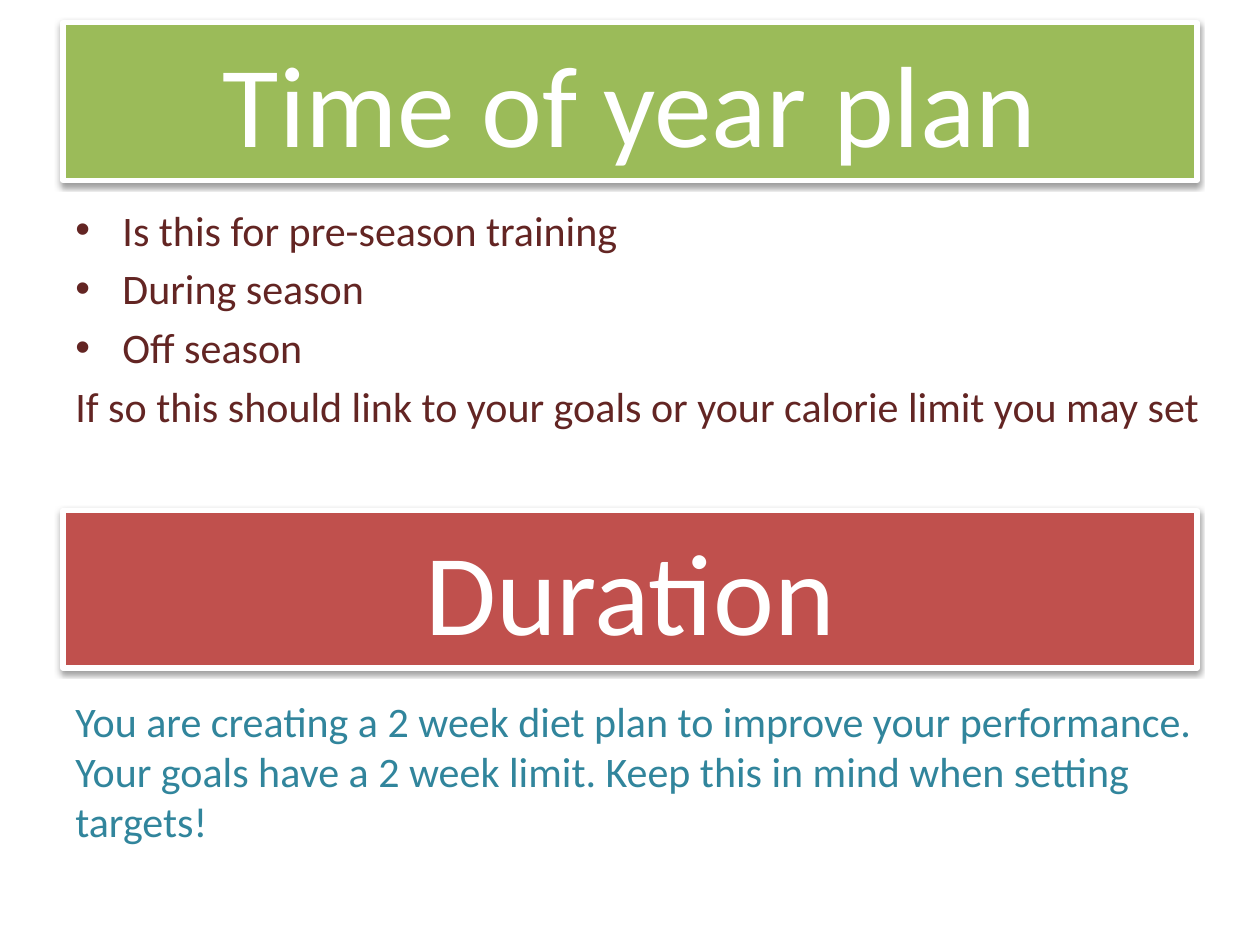
from lxml.etree import SubElement
from pptx import Presentation
from pptx.dml.color import RGBColor
from pptx.enum.shapes import MSO_SHAPE as SHAPE
from pptx.enum.text import MSO_ANCHOR as ANCHOR, PP_ALIGN as ALIGN
from pptx.oxml.ns import qn
from pptx.util import Cm, Pt


def rgb(code):
    return RGBColor.from_string(code)


class Deck:
    """Hold the style and the current slide, and add its elements."""

    font = "Calibri"
    white = "FFFFFF"
    left = Cm(1.27)
    indent = Cm(0.95)

    def __init__(self):
        self.prs = Presentation()
        self.prs.slide_width, self.prs.slide_height = Cm(25.4), Cm(19.05)
        self.s = self.prs.slides.add_slide(self.prs.slide_layouts[6])

    def run(self, p, text, size, color):
        r = p.add_run()
        r.text = text
        r.font.name, r.font.size = self.font, Pt(size)
        r.font.color.rgb = rgb(color)

    def shadow(self, sp):
        sp.shadow.inherit = False
        effects = sp._element.spPr.find(qn("a:effectLst"))
        outer = SubElement(effects, qn("a:outerShdw"), blurRad=str(Pt(3.1)),
                           dist=str(Pt(1.6)), dir="5400000", rotWithShape="0")
        black = SubElement(outer, qn("a:srgbClr"), val="000000")
        SubElement(black, qn("a:alpha"), val="38000")

    def banner(self, top, text, fill):
        sp = self.s.shapes.add_shape(SHAPE.RECTANGLE, self.left, Cm(top), Cm(22.86), Cm(3.18))
        sp.fill.solid()
        sp.fill.fore_color.rgb = rgb(fill)
        sp.line.color.rgb = rgb(self.white)
        sp.line.width = Pt(3)
        self.shadow(sp)
        tf = sp.text_frame
        tf.word_wrap = True
        tf.vertical_anchor = ANCHOR.MIDDLE
        p = tf.paragraphs[0]
        p.alignment = ALIGN.CENTER
        self.run(p, text, 66, self.white)

    def bullet(self, p):
        pPr = p._p.get_or_add_pPr()
        pPr.set("marL", str(self.indent))
        pPr.set("indent", str(-self.indent))
        SubElement(pPr, qn("a:buFont"), typeface="Arial")
        SubElement(pPr, qn("a:buChar"), char="•")

    def body(self, top, text, color, bullets=()):
        tf = self.s.shapes.add_textbox(self.left, Cm(top), Cm(23.62), Cm(12.57)).text_frame
        tf.word_wrap = True
        for i, line in enumerate([*bullets, text]):
            p = tf.add_paragraph() if i else tf.paragraphs[0]
            p.space_before = Pt(4.8)
            if i < len(bullets):
                self.bullet(p)
            self.run(p, line, 24, color)


def main():
    deck = Deck()
    deck.banner(0.46, "Time of year plan", "9BBB59")
    deck.body(3.99, "If so this should link to your goals or your calorie limit you may set",
              "632523", ["Is this for pre-season training", "During season", "Off season"])
    deck.banner(10.29, "Duration", "C0504D")
    deck.body(13.89, "You are creating a 2 week diet plan to improve your performance. "
              "Your goals have a 2 week limit. Keep this in mind when setting targets!", "31859C")
    deck.prs.save("out.pptx")


if __name__ == "__main__":
    main()
